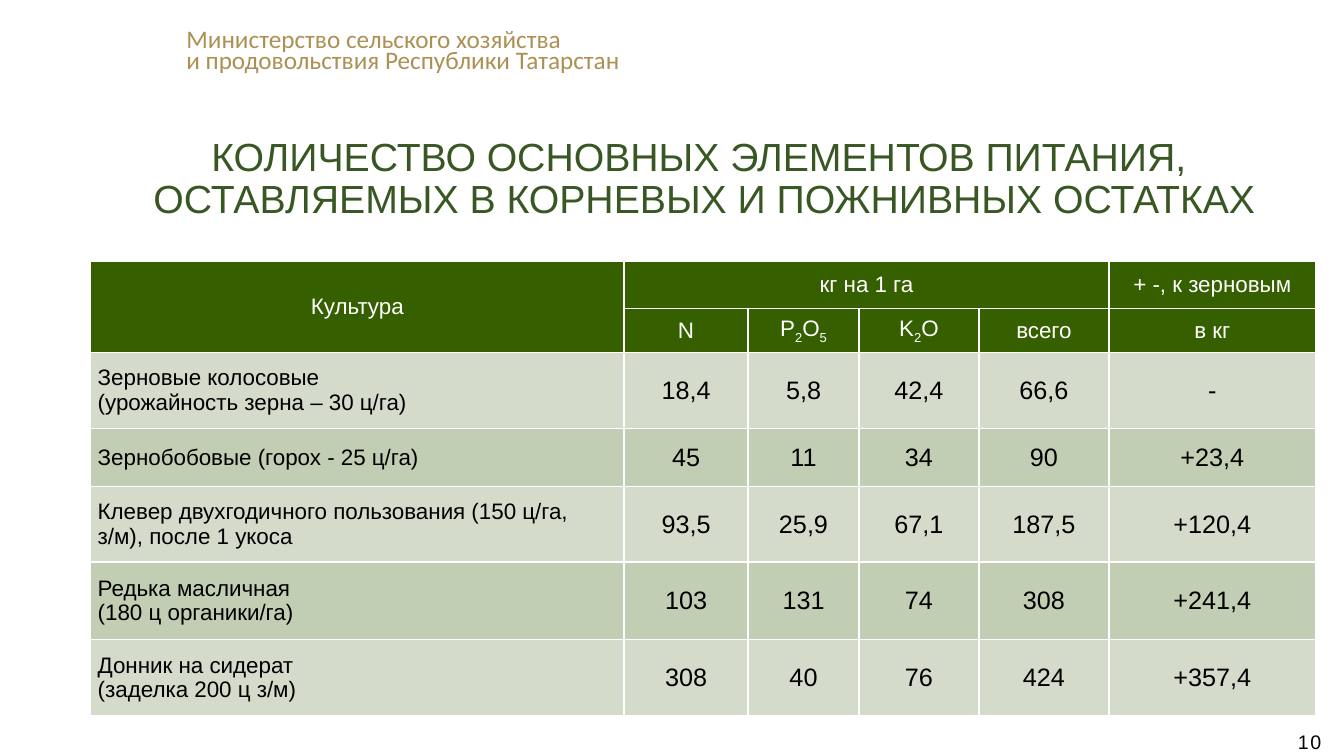
from lxml import etree
from pptx import Presentation
from pptx.dml.color import RGBColor
from pptx.enum.text import MSO_ANCHOR, MSO_AUTO_SIZE, PP_ALIGN
from pptx.oxml.ns import qn
from pptx.util import Inches, Pt

LEFT, CENTER = PP_ALIGN.LEFT, PP_ALIGN.CENTER
TOP, MIDDLE = MSO_ANCHOR.TOP, MSO_ANCHOR.MIDDLE
FIT_SHAPE = MSO_AUTO_SIZE.SHAPE_TO_FIT_TEXT

WHITE = RGBColor(0xFF, 0xFF, 0xFF)
BLACK = RGBColor(0x00, 0x00, 0x00)
GOLD = RGBColor(0xAC, 0x90, 0x54)
TITLE_GREEN = RGBColor(0x38, 0x57, 0x23)
HEAD_GREEN = RGBColor(0x36, 0x60, 0x00)
BANDS = (RGBColor(0xD4, 0xDB, 0xCA), RGBColor(0xC2, 0xCE, 0xB3))

WIDTH, HEIGHT = Inches(13.33), Inches(7.5)
COLUMN_WEIGHTS = (5.29, 1.23, 1.1, 1.19, 1.29, 2.05)
ROW_WEIGHTS = (0.47, 0.44, 0.75, 0.58, 0.75, 0.77, 0.76)

HEADER = [
    ("Культура", "кг на 1 га", "", "", "", "+ -, к зерновым"),
    ("", "N", "P_2_O_5", "K_2_O", "всего", "в кг"),
]
CROPS = [
    ("Зерновые колосовые \v(урожайность зерна – 30 ц/га)", "18,4", "5,8", "42,4", "66,6", "-"),
    ("Зернобобовые (горох - 25 ц/га)", "45", "11", "34", "90", "+23,4"),
    ("Клевер двухгодичного пользования (150 ц/га, з/м), после 1 укоса",
     "93,5", "25,9", "67,1", "187,5", "+120,4"),
    ("Редька масличная \v(180 ц органики/га)", "103", "131", "74", "308", "+241,4"),
    ("Донник на сидерат\n(заделка 200 ц з/м)", "308", "40", "76", "424", "+357,4"),
]


def area(left, top, width, height):
    return (int(WIDTH * left / 100), int(HEIGHT * top / 100),
            int(WIDTH * width / 100), int(HEIGHT * height / 100))


def format_runs(tf, size, color, align, font="Arial", spacing=None):
    for p in tf.paragraphs:
        p.alignment = align
        if spacing:
            p.line_spacing = spacing
        for r in p.runs:
            r.font.size = Pt(size)
            r.font.name = font
            r.font.color.rgb = color


def add_text(slide, box, text, size, color, align, anchor=TOP,
             font="Arial", spacing=None, wrap=True):
    sp = slide.shapes.add_textbox(*area(*box))
    tf = sp.text_frame
    tf.word_wrap = wrap
    tf.vertical_anchor = anchor
    tf.text = text
    format_runs(tf, size, color, align, font, spacing)
    return tf


def set_margins(frame, side, edge):
    frame.margin_left = frame.margin_right = Inches(side)
    frame.margin_top = frame.margin_bottom = Inches(edge)


def add_borders(cell):
    tcPr = cell._tc.get_or_add_tcPr()
    for side in ("lnL", "lnR", "lnT", "lnB"):
        ln = etree.SubElement(tcPr, qn(f"a:{side}"), w=str(Pt(1)))
        fill = etree.SubElement(ln, qn("a:solidFill"))
        etree.SubElement(fill, qn("a:srgbClr"), val=str(WHITE))


def set_formula(p, text):
    for i, part in enumerate(text.split("_")):
        r = p.add_run()
        r.text = part
        if i % 2:
            r._r.get_or_add_rPr().set("baseline", "-25000")


def fill_cell(cell, text, size, color, fill, align):
    add_borders(cell)
    cell.fill.solid()
    cell.fill.fore_color.rgb = fill
    cell.vertical_anchor = MIDDLE
    set_margins(cell, *((0.07, 0.05) if align == LEFT else (0, 0)))
    tf = cell.text_frame
    if "_" in text:
        set_formula(tf.paragraphs[0], text)
    else:
        tf.text = text
    format_runs(tf, size, color, align)


def add_crop_table(slide, box):
    left, top, width, height = area(*box)
    rows = HEADER + CROPS
    frame = slide.shapes.add_table(len(rows), len(COLUMN_WEIGHTS), left, top, width, height)
    table = frame.table
    table.horz_banding = False
    for column, weight in zip(table.columns, COLUMN_WEIGHTS):
        column.width = int(width * weight / sum(COLUMN_WEIGHTS))
    for row, weight in zip(table.rows, ROW_WEIGHTS):
        row.height = int(height * weight / sum(ROW_WEIGHTS))
    for i, row in enumerate(rows):
        for j, text in enumerate(row):
            cell = table.cell(i, j)
            if i < len(HEADER):
                fill_cell(cell, text, 16, WHITE, HEAD_GREEN, CENTER)
            else:
                size, align = (16, LEFT) if j == 0 else (18, CENTER)
                fill_cell(cell, text, size, BLACK, BANDS[i % 2], align)
    table.cell(0, 0).merge(table.cell(1, 0))
    table.cell(0, 1).merge(table.cell(0, 4))


def add_page_number(slide, box, number):
    tf = add_text(slide, box, number, 14, BLACK, CENTER, wrap=False)
    set_margins(tf, 0, 0)
    tf.paragraphs[0].runs[0]._r.get_or_add_rPr().set("spc", "100")


def main():
    prs = Presentation()
    prs.slide_width, prs.slide_height = WIDTH, HEIGHT
    slide = prs.slides.add_slide(prs.slide_layouts[6])
    ministry = add_text(
        slide, (13.13, 3.47, 34.13, 7.2),
        "Министерство сельского хозяйства\nи продовольствия Республики Татарстан",
        18, GOLD, LEFT, font="Calibri", spacing=0.7, wrap=False)
    ministry.auto_size = FIT_SHAPE
    add_crop_table(slide, (6.75, 34.53, 91.15, 60.2))
    add_text(
        slide, (8.55, 17.47, 87.7, 12.67),
        "КОЛИЧЕСТВО ОСНОВНЫХ ЭЛЕМЕНТОВ ПИТАНИЯ, \vОСТАВЛЯЕМЫХ В КОРНЕВЫХ И ПОЖНИВНЫХ ОСТАТКАХ",
        28, TITLE_GREEN, CENTER, MIDDLE, spacing=0.9)
    add_page_number(slide, (96.47, 96.53, 1.95, 3.07), "10")
    prs.save("out.pptx")


if __name__ == "__main__":
    main()
